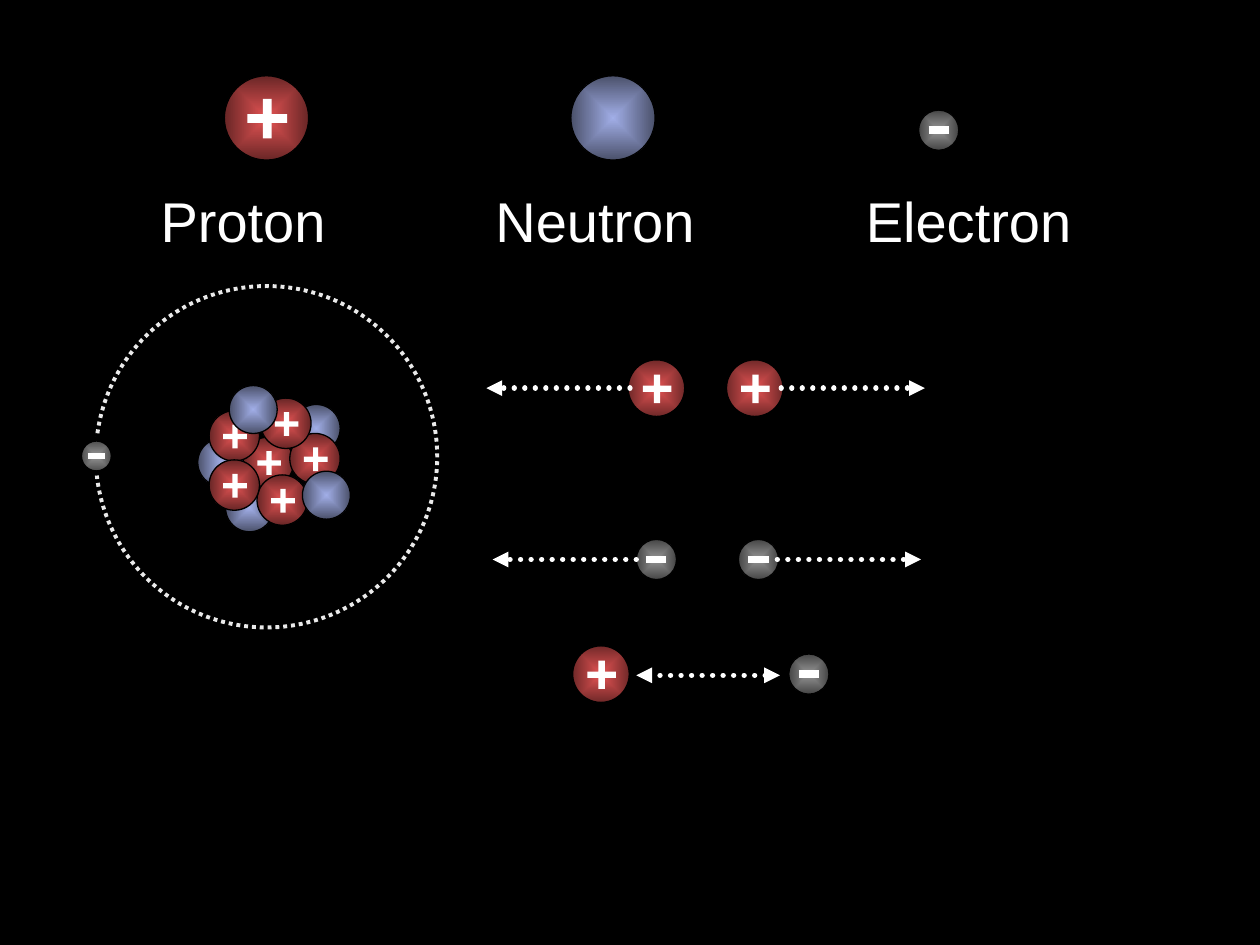
from lxml import etree
from pptx import Presentation
from pptx import util as u
from pptx.dml.color import RGBColor
from pptx.enum import dml, shapes, text
from pptx.oxml import ns

Pt = u.Pt


def colour(value):
    return RGBColor.from_string(value)


class AtomSlide:
    FONT = "Arial"
    WHITE, BLACK, ORBIT = "FFFFFF", "000000", "EAEAEA"
    RED = ("E35353", "692626")
    BLUE = ("A1AEE7", "4B516B")
    GREY = ("969696", "454545")

    def __init__(self, presentation):
        self.slide = presentation.slides.add_slide(presentation.slide_layouts[6])
        self.slide.background.fill.solid()
        self.slide.background.fill.fore_color.rgb = colour(self.BLACK)

    def centred(self, parent, kind, x, y, size):
        """Add an unfilled square-framed shape centred on (x, y)."""
        shape = parent.shapes.add_shape(
            kind, Pt(x - size / 2), Pt(y - size / 2), Pt(size), Pt(size))
        shape.shadow.inherit = False
        shape.fill.background()
        return shape

    def outline(self, shape, value, width):
        shape.line.color.rgb = colour(value)
        shape.line.width = Pt(width)

    def ball(self, parent, x, y, size, shades, edge):
        """Add a sphere shaded from its centre to its rim."""
        shape = self.centred(parent, shapes.MSO_SHAPE.OVAL, x, y, size)
        shape.fill.gradient()
        for stop, shade in zip(shape.fill.gradient_stops, shades):
            stop.color.rgb = colour(shade)
        gradient = shape._element.spPr.find(ns.qn("a:gradFill"))
        gradient.remove(gradient.find(ns.qn("a:lin")))
        radial = etree.SubElement(gradient, ns.qn("a:path"), {"path": "shape"})
        middle = dict.fromkeys("ltrb", "50000")
        etree.SubElement(radial, ns.qn("a:fillToRect"), middle)
        self.outline(shape, self.BLACK, edge)

    def line(self, parent, x1, x2, y, width):
        connector = parent.shapes.add_connector(
            shapes.MSO_CONNECTOR.STRAIGHT, Pt(x1), Pt(y), Pt(x2), Pt(y))
        self.outline(connector, self.WHITE, width)
        etree.SubElement(connector._element.spPr, ns.qn("a:effectLst"))
        return connector

    def neutron(self, x, y, size):
        self.ball(self.slide, x, y, size, self.BLUE, 0.75)

    def proton(self, x, y, size, edge=0.75):
        group = self.slide.shapes.add_group_shape()
        self.ball(group, x, y, size, self.RED, edge)
        plus = self.centred(group, shapes.MSO_SHAPE.CROSS, x + 0.4, y + 0.4, size * 0.47)
        plus.adjustments[0] = 0.39
        plus.fill.solid()
        plus.fill.fore_color.rgb = colour(self.WHITE)
        plus.line.fill.background()

    def electron(self, x, y, size=23, edge=0.75, sign_width=4.5):
        group = self.slide.shapes.add_group_shape()
        self.ball(group, x, y, size, self.GREY, edge)
        self.line(group, x - size / 4, x + size / 4, y, sign_width)

    def orbit(self, x, y, size):
        ring = self.centred(self.slide, shapes.MSO_SHAPE.OVAL, x, y, size)
        self.outline(ring, self.ORBIT, 2.25)
        ring.line.dash_style = dml.MSO_LINE.ROUND_DOT

    def arrow(self, x1, x2, y, ends=("tailEnd",)):
        connector = self.line(self.slide, x1, x2, y, 3)
        connector.line.dash_style = dml.MSO_LINE.ROUND_DOT
        stroke = connector._element.spPr.find(ns.qn("a:ln"))
        stroke.set("cap", "rnd")
        for end in ends:
            etree.SubElement(stroke, ns.qn("a:" + end), {"type": "triangle"})

    def labels(self, left, top, width, height, words, centres):
        """Write the words on one line, each centred on its own tab stop."""
        box = self.slide.shapes.add_textbox(Pt(left), Pt(top), Pt(width), Pt(height))
        frame = box.text_frame
        frame.word_wrap = True
        frame.auto_size = text.MSO_AUTO_SIZE.SHAPE_TO_FIT_TEXT
        paragraph = frame.paragraphs[0]
        paragraph.text = "".join("\t" + word for word in words)
        tabs = etree.SubElement(paragraph._p.get_or_add_pPr(), ns.qn("a:tabLst"))
        for centre in centres:
            position = Pt(centre - left) - frame.margin_left
            etree.SubElement(tabs, ns.qn("a:tab"), {"pos": str(position), "algn": "ctr"})
        for run in paragraph.runs:
            run.font.name = self.FONT
            run.font.size = Pt(32)
            run.font.color.rgb = colour(self.WHITE)


def main():
    presentation = Presentation()
    presentation.slide_width, presentation.slide_height = Pt(720), Pt(540)
    atom = AtomSlide(presentation)

    nucleon, medium, arrow_length = 28.8, 34.6, 82.1
    back_neutrons = [(180.7, 244.8), (142.6, 290.2), (126.7, 264.2)]
    front_neutrons = [(144.7, 234), (186.5, 283)]
    nucleus_protons = [(153.4, 264.2), (180, 262.1), (161.3, 285.8),
                       (133.9, 249.1), (163.4, 241.9), (133.9, 277.2)]

    for x, y in back_neutrons:
        atom.neutron(x, y, 27.4)

    # Legend
    atom.neutron(350.3, 67.4, 48.2)
    atom.proton(152.3, 67.4, 48.2)
    atom.electron(536.4, 74.4)
    atom.labels(66.2, 103, 573.8, 45.4,
                ["Proton", "Neutron", "Electron"], [139.1, 340.2, 553.7])

    # Atom
    atom.orbit(152.3, 261, 195.1)
    atom.electron(55.1, 260.6, 19.4, edge=3, sign_width=3)
    for x, y in nucleus_protons:
        atom.proton(x, y, nucleon)

    # Like charges repel
    for x in (431.3, 375.1):
        atom.proton(x, 221.8, medium, edge=3)
    for x in (375.1, 433.4):
        atom.electron(x, 319.7)
    for left, right, y in [(363.6, 444.2, 319.7), (360, 446.4, 221.8)]:
        atom.arrow(left, left - arrow_length, y)
        atom.arrow(right, right + arrow_length, y)

    # Opposite charges attract
    atom.arrow(445.7, 445.7 - arrow_length, 385.9, ends=("headEnd", "tailEnd"))
    atom.proton(343.4, 385.2, medium, edge=3)
    atom.electron(462.2, 385.2)

    for x, y in front_neutrons:
        atom.neutron(x, y, 27.4)

    presentation.save("out.pptx")


if __name__ == "__main__":
    main()
